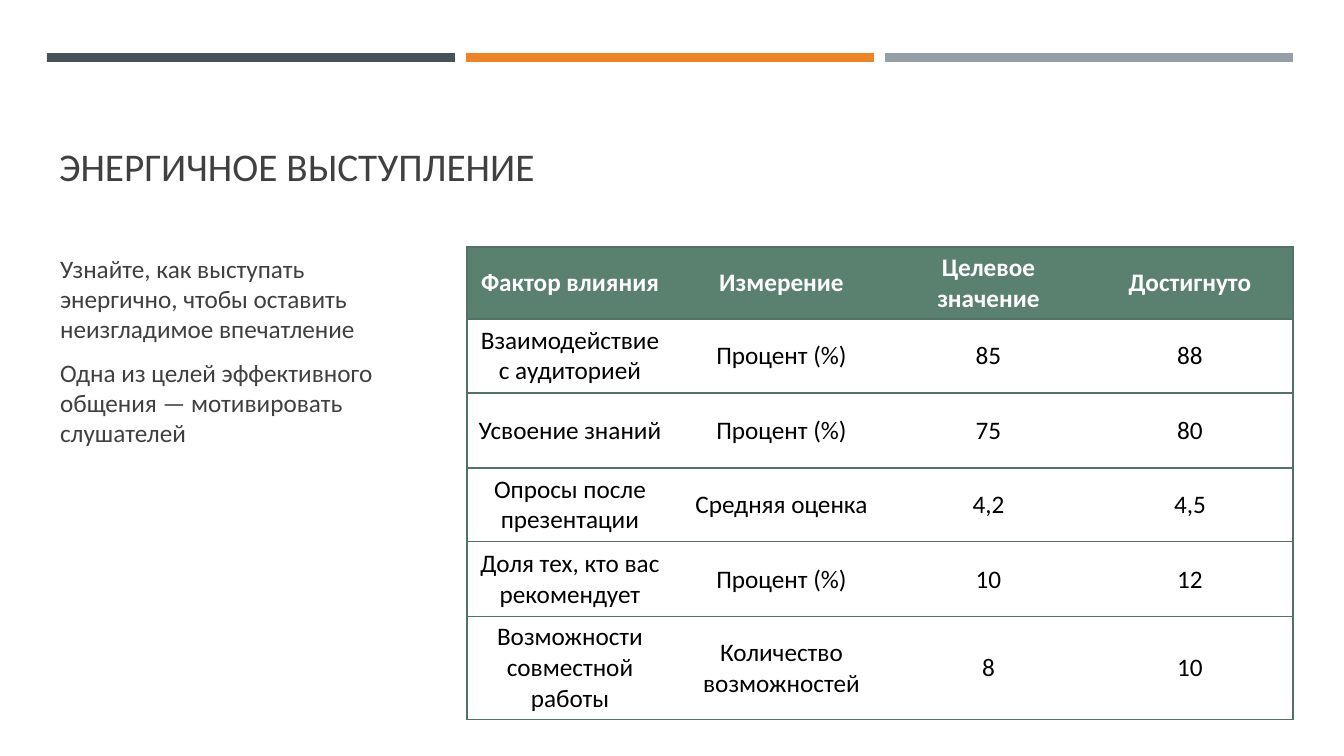
from pptx import Presentation
from pptx.dml.color import RGBColor
from pptx.enum.shapes import MSO_SHAPE
from pptx.enum.text import MSO_ANCHOR, MSO_AUTO_SIZE, PP_ALIGN
from pptx.oxml.xmlchemy import OxmlElement
from pptx.util import Pt

PX = 914400 / 100.8
SLATE = RGBColor(0x46, 0x53, 0x59)
ORANGE = RGBColor(0xED, 0x84, 0x28)
GREY = RGBColor(0x96, 0x9F, 0xA7)
TEXT = RGBColor(0x40, 0x40, 0x40)
GREEN = RGBColor(0x5A, 0x80, 0x70)
BORDER = RGBColor(0x51, 0x73, 0x66)
WHITE = RGBColor(0xFF, 0xFF, 0xFF)
BLACK = RGBColor(0x00, 0x00, 0x00)


def px(*lengths):
    return [round(n * PX) for n in lengths]


def write(tf, *lines, size=18, color=TEXT, bold=False, align=PP_ALIGN.LEFT,
          anchor=MSO_ANCHOR.TOP, spacing=1.0, before=0, after=0):
    tf.word_wrap = True
    tf.vertical_anchor = anchor
    for i, line in enumerate(lines):
        p = tf.paragraphs[0] if i == 0 else tf.add_paragraph()
        pPr = p._p.get_or_add_pPr()
        pPr.set("marL", "0")
        pPr.set("indent", "0")
        pPr.append(OxmlElement("a:buNone"))
        p.alignment = align
        p.line_spacing = spacing
        p.space_before = Pt(before if i else 0)
        p.space_after = Pt(after)
        r = p.add_run()
        r.text = line
        r.font.name = "Calibri"
        r.font.size = Pt(size)
        r.font.bold = bold
        r.font.color.rgb = color


prs = Presentation()
prs.slide_width, prs.slide_height = px(1344, 756)
s = prs.slides.add_slide(prs.slide_layouts[1])

# Accent bars
for i, color in enumerate((SLATE, ORANGE, GREY)):
    bar = s.shapes.add_shape(MSO_SHAPE.RECTANGLE, *px(47 + 419 * i, 53, 408, 9))
    bar.shadow.inherit = False
    bar.fill.solid()
    bar.fill.fore_color.rgb = color
    bar.line.fill.background()

# Title and body
title, body = s.placeholders
title.left, title.top, title.width, title.height = px(49, 80, 1243, 115)
body.left, body.top, body.width, body.height = px(50, 248, 369, 440)
for sp in (title, body):
    sp.text_frame.auto_size = MSO_AUTO_SIZE.NONE
write(title.text_frame, "ЭНЕРГИЧНОЕ ВЫСТУПЛЕНИЕ", size=28,
      anchor=MSO_ANCHOR.BOTTOM, spacing=0.9)
write(body.text_frame,
      "Узнайте, как выступать энергично, чтобы оставить неизгладимое впечатление",
      "Одна из целей эффективного общения — мотивировать слушателей",
      before=3.6, after=6)

# Results table
rows = [
    ("Фактор влияния", "Измерение", "Целевое значение", "Достигнуто"),
    ("Взаимодействие с аудиторией", "Процент (%)", "85", "88"),
    ("Усвоение знаний", "Процент (%)", "75", "80"),
    ("Опросы после презентации", "Средняя оценка", "4,2", "4,5"),
    ("Доля тех, кто вас рекомендует", "Процент (%)", "10", "12"),
    ("Возможности совместной работы", "Количество возможностей", "8", "10"),
]
col_widths = px(206, 217, 197, 206)
row_heights = px(72, 74, 75, 74, 75, 102)
table = s.shapes.add_table(len(rows), len(col_widths), *px(467, 247),
                           sum(col_widths), sum(row_heights)).table
table.horz_banding = False
for column, width in zip(table.columns, col_widths):
    column.width = width
for row, height in zip(table.rows, row_heights):
    row.height = height

for i, row in enumerate(rows):
    header = i == 0
    for j, value in enumerate(row):
        cell = table.cell(i, j)
        write(cell.text_frame, value, color=WHITE if header else BLACK,
              bold=header, align=PP_ALIGN.CENTER)
        cell.vertical_anchor = MSO_ANCHOR.MIDDLE
        visible = {"L": j == 0, "R": j == len(row) - 1, "T": True, "B": True}
        for side, shown in visible.items():
            ln = OxmlElement(f"a:ln{side}")
            ln.set("w", str(Pt(1)))
            if shown:
                fill = OxmlElement("a:solidFill")
                clr = OxmlElement("a:srgbClr")
                clr.set("val", str(BORDER))
                fill.append(clr)
            else:
                fill = OxmlElement("a:noFill")
            ln.append(fill)
            cell._tc.get_or_add_tcPr().append(ln)
        cell.fill.solid()
        cell.fill.fore_color.rgb = GREEN if header else WHITE

prs.save("out.pptx")
